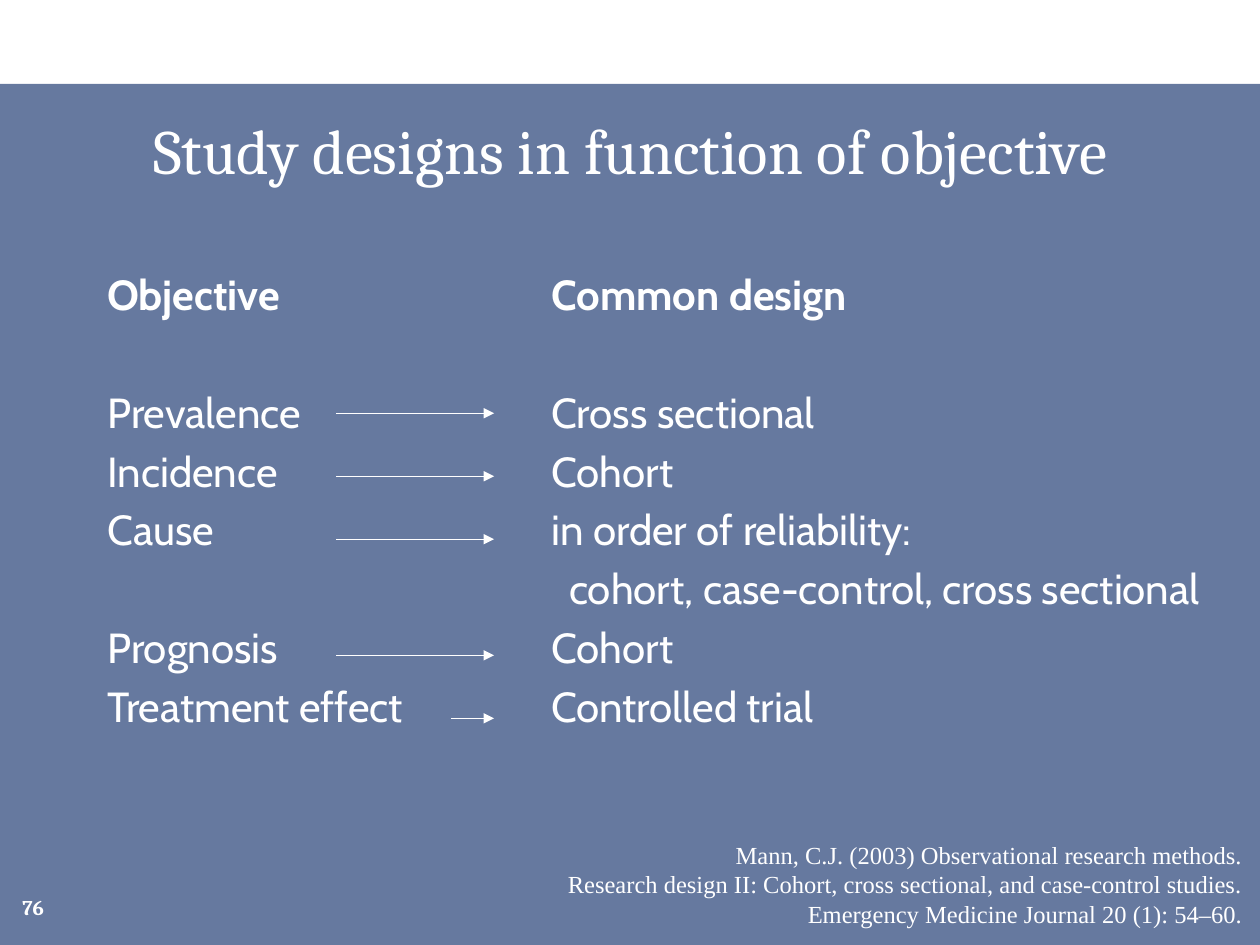
import pptx
import pptx.dml.color
import pptx.enum.shapes
import pptx.enum.text
import pptx.oxml
import pptx.oxml.ns
import pptx.util
from pptx.util import Cm

COLORS = {"band": "002060", "text": "FFFFFF"}
TITLE = "Study designs in function of objective"
HEADER = ("Objective", "Common design")
# Objective, lines of common design, arrow start, arrow height (cm)
STUDIES = [
    ("Prevalence", ["Cross sectional"], 6.78, 8.33),
    ("Incidence", ["Cohort"], 6.78, 9.6),
    ("Cause", ["in order of reliability:",
               "cohort, case-control, cross sectional"], 6.78, 10.87),
    ("Prognosis", ["Cohort"], 6.78, 13.21),
    ("Treatment effect", ["Controlled trial"], 9.09, 14.48),
]
CITATION = [
    "Mann, C.J. (2003) Observational research methods.",
    "Research design II: Cohort, cross sectional, and case-control studies.",
    "Emergency Medicine Journal 20 (1): 54–60.",
]
PAGE_NUMBER = "76"
ARROW_END = 9.96
COLUMN_TOP, COLUMN_HEIGHT = 5.29, 11.23
COLUMN_EDGES = (1.91, 10.86, 25.4)
CONTINUATION_INDENT = Cm(0.36)
ROW_GAP = 4.8
ROW_PITCH = 33.6


def color(name):
    return pptx.dml.color.RGBColor.from_string(COLORS[name])


def add_xml(parent, tag, **attributes):
    element = pptx.oxml.parse_xml(f"<a:{tag} {pptx.oxml.ns.nsdecls('a')}/>")
    for name, value in attributes.items():
        element.set(name, str(value))
    parent.append(element)


def place(shape, left, top, width, height):
    shape.left, shape.top, shape.width, shape.height = map(
        Cm, (left, top, width, height))


def format_runs(paragraph, font_name, size, bold=False):
    for run in paragraph.runs:
        run.font.name = font_name
        run.font.size = pptx.util.Pt(size)
        run.font.bold = bold
        run.font.color.rgb = color("text")


def add_band(slide):
    band = slide.shapes.add_shape(
        pptx.enum.shapes.MSO_SHAPE.RECTANGLE, 0, Cm(1.69), Cm(25.4), Cm(17.36))
    band.shadow.inherit = False
    band.fill.solid()
    band.fill.fore_color.rgb = color("band")
    fill = band._element.spPr.find(pptx.oxml.ns.qn("a:solidFill"))
    add_xml(fill[0], "alpha", val=60000)
    band.line.fill.background()
    slide.shapes._spTree.insert(2, band._element)


def add_title(slide):
    title = slide.shapes.title
    place(title, 0.64, 2.12, 24.13, 2.12)
    frame = title.text_frame
    frame.text = TITLE
    frame.auto_size = pptx.enum.text.MSO_AUTO_SIZE.NONE
    frame.vertical_anchor = pptx.enum.text.MSO_ANCHOR.TOP
    paragraph = frame.paragraphs[0]
    paragraph.alignment = pptx.enum.text.PP_ALIGN.CENTER
    format_runs(paragraph, "Cambria", 36)


def column_rows():
    """Return (text, rows skipped above, indent) lists for both columns."""
    objectives = [(HEADER[0], 0, 0)]
    designs = [(HEADER[1], 0, 0)]
    skipped = 1
    for objective, lines, _, _ in STUDIES:
        objectives.append((objective, skipped, 0))
        designs.append((lines[0], 1 if len(designs) == 1 else 0, 0))
        designs += [(line, 0, CONTINUATION_INDENT) for line in lines[1:]]
        skipped = len(lines) - 1
    return objectives, designs


def fill_column(body, rows, left, right):
    place(body, left, COLUMN_TOP, right - left, COLUMN_HEIGHT)
    frame = body.text_frame
    frame.auto_size = pptx.enum.text.MSO_AUTO_SIZE.NONE
    frame.text = "\n".join(text for text, _, _ in rows)
    for index, (_, skipped, indent) in enumerate(rows):
        paragraph = frame.paragraphs[index]
        properties = paragraph._p.get_or_add_pPr()
        properties.set("marL", str(indent))
        properties.set("indent", "0")
        add_xml(properties, "buNone")
        gap = ROW_GAP + skipped * ROW_PITCH if index else 0
        paragraph.space_before = pptx.util.Pt(gap)
        format_runs(paragraph, "Cabin", 24, bold=index == 0)


def add_arrow(slide, start, height):
    arrow = slide.shapes.add_connector(
        pptx.enum.shapes.MSO_CONNECTOR.STRAIGHT,
        Cm(start), Cm(height), Cm(ARROW_END), Cm(height))
    arrow.line.color.rgb = color("text")
    arrow.line.width = pptx.util.Pt(0.75)
    add_xml(arrow.line._get_or_add_ln(), "tailEnd", type="triangle")
    add_xml(arrow._element.spPr, "effectLst")


def add_text(slide, position, lines, font_name, size, alignment, bold=False):
    box = slide.shapes.add_textbox(0, 0, 0, 0)
    place(box, *position)
    frame = box.text_frame
    frame.word_wrap = True
    frame.vertical_anchor = pptx.enum.text.MSO_ANCHOR.MIDDLE
    frame.text = "\n".join(lines)
    for paragraph in frame.paragraphs:
        paragraph.alignment = alignment
        format_runs(paragraph, font_name, size, bold)


def main():
    presentation = pptx.Presentation()
    presentation.slide_width = Cm(25.4)
    presentation.slide_height = Cm(19.05)
    slide = presentation.slides.add_slide(presentation.slide_layouts[3])
    add_band(slide)
    add_title(slide)
    for index, rows in enumerate(column_rows()):
        fill_column(slide.placeholders[index + 1], rows,
                    COLUMN_EDGES[index], COLUMN_EDGES[index + 1])
    for _, _, start, height in STUDIES:
        add_arrow(slide, start, height)
    align = pptx.enum.text.PP_ALIGN
    add_text(slide, (0.2, 17.78, 5.72, 1.02), [PAGE_NUMBER],
             "Cambria", 12, align.LEFT, bold=True)
    add_text(slide, (2.44, 16.79, 22.86, 2.06), CITATION,
             "Times New Roman", 14, align.RIGHT)
    presentation.save("out.pptx")


if __name__ == "__main__":
    main()
